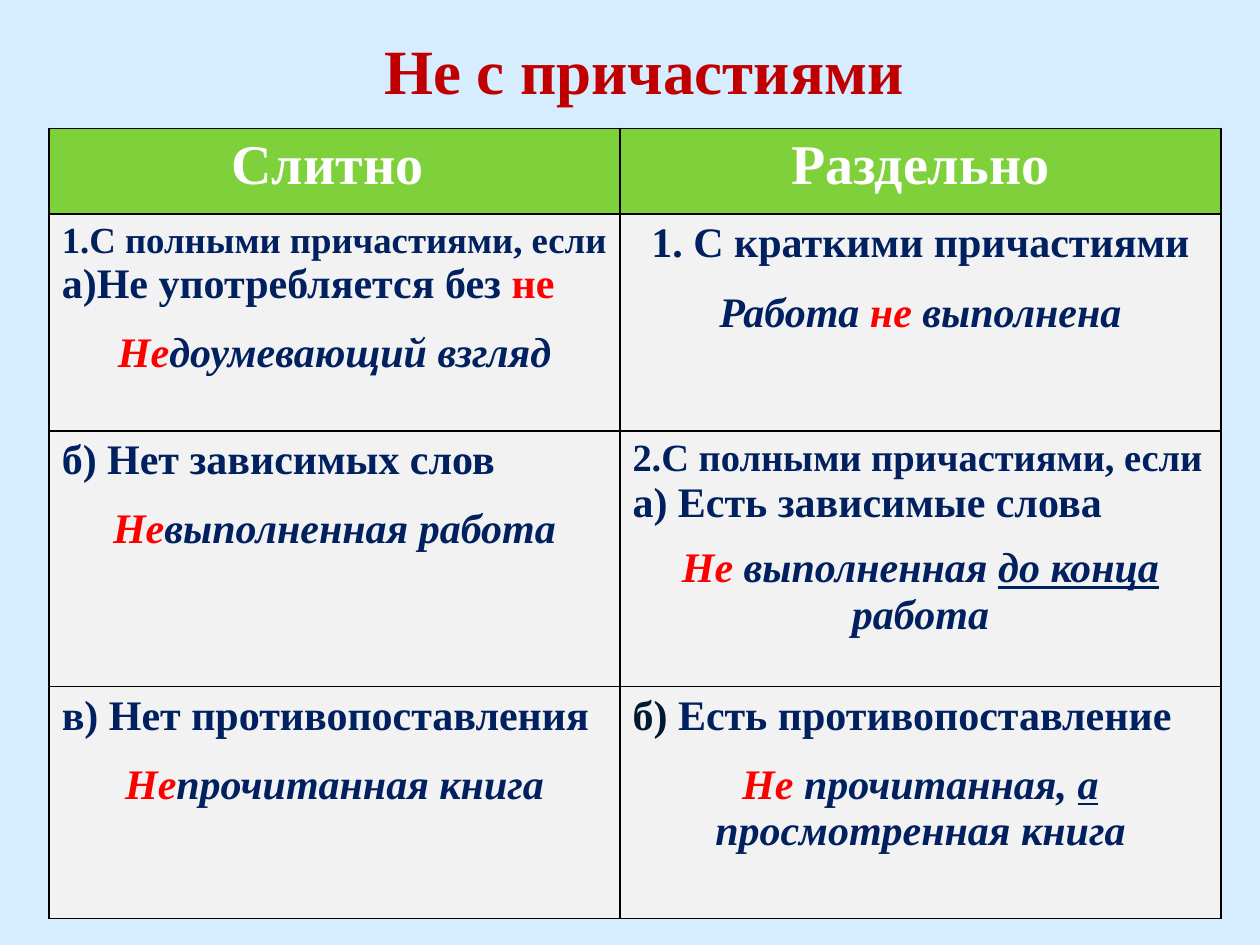
from lxml import etree
from pptx import Presentation
from pptx.dml.color import RGBColor
from pptx.enum.text import MSO_ANCHOR, PP_ALIGN
from pptx.oxml.ns import qn
from pptx.util import Inches, Pt

LEFT, CENTER = PP_ALIGN.LEFT, PP_ALIGN.CENTER
MIDDLE = MSO_ANCHOR.MIDDLE
FONT = "Times New Roman"
NAVY, RED, INK, WHITE = "002060", "FF0000", "00192F", "FFFFFF"
GREEN, GREY, BLACK = "7FD13B", "F2F2F2", "000000"
COLS = [4.53, 4.77]
ROWS = [0.68, 1.72, 2.03, 1.84]


def paint(hexa):
    return RGBColor.from_string(hexa)


def run(text, color=NAVY, line=False):
    return text, color, line


def para(*runs, size=24, align=LEFT, italic=False, gap=0):
    return runs, size, align, italic, gap


def sample(*runs, gap=13):
    """An example phrase: centred italics set off from the rule above."""
    return para(*runs, align=CENTER, italic=True, gap=gap)


def head(text):
    return [para(run(text, WHITE), size=32, align=CENTER)]


CELLS = [
    [head("Слитно "), head("Раздельно")],
    [
        [para(run("1.С полными причастиями, если"), size=21),
         para(run("а)Не употребляется без "), run("не", RED)),
         sample(run("Не", RED), run("доумевающий взгляд"))],
        [para(run("1. С краткими причастиями"), align=CENTER),
         sample(run("Работа "), run("не", RED), run(" выполнена"))],
    ],
    [
        [para(run("б) Нет зависимых слов")),
         sample(run("Не", RED), run("выполненная работа"))],
        [para(run("2.С полными причастиями, если"), size=22),
         para(run("а) Есть зависимые слова")),
         sample(run("Не", RED), run(" выполненная "),
                run("до конца ", line=True), run("работа"), gap=11)],
    ],
    [
        [para(run("в) Нет противопоставления")),
         sample(run("Не", RED), run("прочитанная книга"))],
        [para(run("б) ", INK), run("Есть противопоставление")),
         sample(run("Не ", RED), run("прочитанная, "),
                run("а", line=True), run(" просмотренная книга"))],
    ],
]


def style(font, size, color, italic=False, line=False):
    font.name, font.size, font.bold = FONT, Pt(size), True
    font.italic, font.underline = italic, line
    font.color.rgb = paint(color)


def write(frame, paras):
    for i, (runs, size, align, italic, gap) in enumerate(paras):
        p = frame.add_paragraph() if i else frame.paragraphs[0]
        p.alignment, p.space_before = align, Pt(gap)
        for text, color, line in runs:
            part = p.add_run()
            part.text = text
            style(part.font, size, color, italic, line)


def edge(cell):
    """Draw the four cell borders."""
    props = cell._tc.get_or_add_tcPr()
    for side in ("a:lnL", "a:lnR", "a:lnT", "a:lnB"):
        line = etree.SubElement(props, qn(side), w=str(Pt(1)))
        fill = etree.SubElement(line, qn("a:solidFill"))
        etree.SubElement(fill, qn("a:srgbClr"), val=BLACK)


def add_title(slide, x, y, w, h):
    title = slide.shapes.title
    title.left, title.top = Inches(x), Inches(y)
    title.width, title.height = Inches(w), Inches(h)
    frame = title.text_frame
    frame.text = "Не с причастиями"
    frame.vertical_anchor = MIDDLE
    frame.margin_bottom = Inches(0.59)  # lifts the text clear of the table
    p = frame.paragraphs[0]
    p.alignment = CENTER
    style(p.runs[0].font, 36, "C00000")


def add_rules(slide, x, y):
    grid = slide.shapes.add_table(
        len(ROWS), len(COLS), Inches(x), Inches(y),
        Inches(sum(COLS)), Inches(sum(ROWS))).table
    for col, w in zip(grid.columns, COLS):
        col.width = Inches(w)
    for r, (row, h) in enumerate(zip(grid.rows, ROWS)):
        row.height = Inches(h)
        for cell, paras in zip(row.cells, CELLS[r]):
            edge(cell)
            cell.fill.solid()
            cell.fill.fore_color.rgb = paint(GREY if r else GREEN)
            write(cell.text_frame, paras)


def main():
    deck = Presentation()
    deck.slide_width, deck.slide_height = Inches(10), Inches(7.5)
    slide = deck.slides.add_slide(deck.slide_layouts[5])
    back = slide.background.fill
    back.solid()
    back.fore_color.rgb = paint("D6ECFF")
    add_title(slide, 0.86, 0.39, 8.5, 0.86)
    add_rules(slide, 0.39, 1.02)
    deck.save("out.pptx")


if __name__ == "__main__":
    main()
